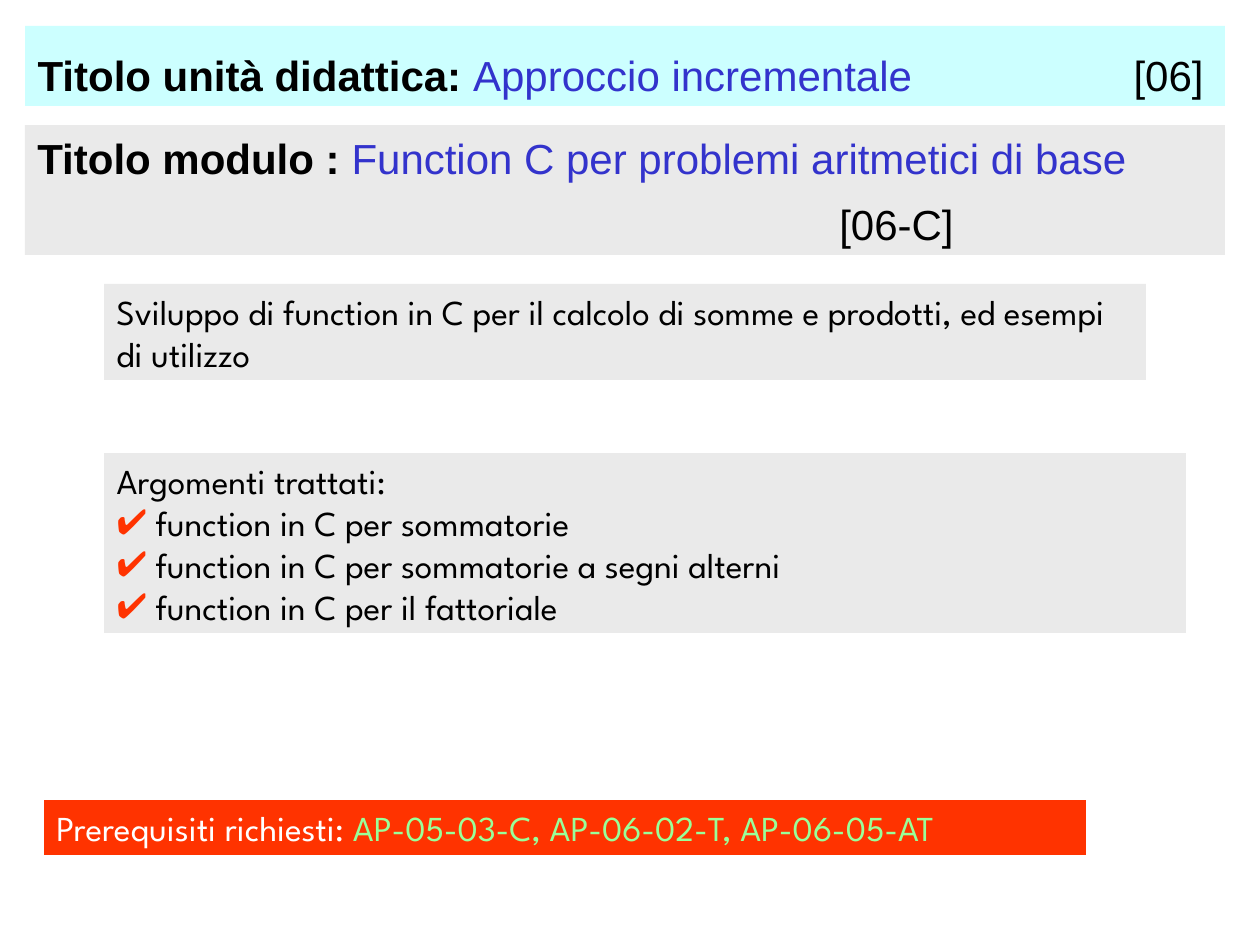
from lxml import etree
from pptx import Presentation
from pptx.dml.color import RGBColor
from pptx.enum.text import MSO_ANCHOR, MSO_AUTO_SIZE, PP_ALIGN
from pptx.oxml.ns import qn
from pptx.util import Pt

LEFT = PP_ALIGN.LEFT
TOP, BOTTOM = MSO_ANCHOR.TOP, MSO_ANCHOR.BOTTOM
NO_AUTOFIT = MSO_AUTO_SIZE.NONE
EMU_PER_PX = 914400 / 126
HEADING_FONT, BODY_FONT = "Arial", "League Spartan"
HEADING_SIZE, BODY_SIZE = 24, 20
COLORS = {
    "unit": "CCFFFF",
    "panel": "EAEAEA",
    "alert": "FF3300",
    "black": "000000",
    "white": "FFFFFF",
    "name": "3333CC",
    "code": "99FF99",
}


def px(length):
    """Turn pixels into EMU."""
    return round(length * EMU_PER_PX)


def rgb(name):
    """Look up a named colour."""
    return RGBColor.from_string(COLORS[name])


def format_panel(panel, box, fill, anchor=TOP):
    """Place and fill a panel and return its text frame."""
    panel.left, panel.top, panel.width, panel.height = map(px, box)
    panel.fill.solid()
    panel.fill.fore_color.rgb = rgb(fill)
    frame = panel.text_frame
    frame.word_wrap = True
    frame.auto_size = NO_AUTOFIT
    frame.vertical_anchor = anchor
    return frame


def add_panel(slide, box, fill, anchor=TOP):
    """Add a filled text box and return its text frame."""
    return format_panel(slide.shapes.add_textbox(*map(px, box)), box, fill, anchor)


def format_paragraph(paragraph, space_before=0):
    """Align a paragraph left with the given space above."""
    paragraph.alignment = LEFT
    paragraph.space_before = Pt(space_before)


def add_run(paragraph, text, color="black", font=BODY_FONT, size=BODY_SIZE, bold=False):
    """Add one formatted run."""
    run = paragraph.add_run()
    run.text = text
    run.font.name = font
    run.font.size = Pt(size)
    run.font.bold = bold
    run.font.color.rgb = rgb(color)


def add_heading_run(paragraph, text, color="black", bold=False):
    """Add one run in the heading style."""
    add_run(paragraph, text, color, HEADING_FONT, HEADING_SIZE, bold)


def add_tab_stop(paragraph, position):
    """Set a left tab stop."""
    tabs = etree.SubElement(paragraph._p.get_or_add_pPr(), qn("a:tabLst"))
    etree.SubElement(tabs, qn("a:tab"), pos=str(px(position)), algn="l")


def set_bullet(paragraph, mark=None, indent=0):
    """Give a paragraph a coloured bullet, or none."""
    properties = paragraph._p.get_or_add_pPr()
    properties.set("marL", str(px(indent)))
    properties.set("indent", str(-px(indent)))
    if mark is None:
        etree.SubElement(properties, qn("a:buNone"))
        return
    color = etree.SubElement(properties, qn("a:buClr"))
    etree.SubElement(color, qn("a:srgbClr"), val=COLORS["alert"])
    etree.SubElement(properties, qn("a:buChar"), char=mark)


def add_unit_title(slide):
    """Fill the title with the unit name and number."""
    frame = format_panel(slide.shapes.title, (25, 26, 1200, 80), "unit", BOTTOM)
    title = frame.paragraphs[0]
    format_paragraph(title)
    add_tab_stop(title, 1096)
    add_heading_run(title, "Titolo unità didattica: ", bold=True)
    add_heading_run(title, "Approccio incrementale", "name")
    add_heading_run(title, "\t[06]")


def add_module_title(slide):
    """Add the module name and its code below."""
    frame = add_panel(slide, (25, 125, 1200, 130), "panel", BOTTOM)
    module = frame.paragraphs[0]
    format_paragraph(module)
    add_heading_run(module, "Titolo modulo : ", bold=True)
    add_heading_run(module, "Function C per problemi aritmetici di base", "name")
    code = frame.add_paragraph()
    format_paragraph(code, space_before=9)
    add_tab_stop(code, 802)
    add_heading_run(code, "\t[06-C]")


def add_note(slide, box, fill, runs):
    """Add a one-paragraph panel from text and colour pairs."""
    note = add_panel(slide, box, fill).paragraphs[0]
    format_paragraph(note)
    for text, color in runs:
        add_run(note, text, color)


def add_topics(slide, heading, topics):
    """Fill the body with a heading and a ticked list."""
    frame = format_panel(slide.placeholders[1], (104, 453, 1082, 180), "panel")
    paragraph = frame.paragraphs[0]
    format_paragraph(paragraph)
    set_bullet(paragraph)
    add_run(paragraph, heading)
    for topic in topics:
        paragraph = frame.add_paragraph()
        format_paragraph(paragraph)
        set_bullet(paragraph, "✔", 39)
        add_run(paragraph, topic)


def main():
    """Build and save the slide."""
    deck = Presentation()
    deck.slide_width, deck.slide_height = px(1260), px(945)
    slide = deck.slides.add_slide(deck.slide_layouts[1])
    add_unit_title(slide)
    add_module_title(slide)
    add_note(slide, (104, 284, 1042, 96), "panel", [
        ("Sviluppo di function in C per il calcolo di somme e prodotti, "
         "ed esempi di utilizzo", "black"),
    ])
    add_topics(slide, "Argomenti trattati:", [
        "function in C per sommatorie",
        "function in C per sommatorie a segni alterni",
        "function in C per il fattoriale",
    ])
    add_note(slide, (44, 800, 1042, 55), "alert", [
        ("Prerequisiti richiesti: ", "white"),
        ("AP-05-03-C, AP-06-02-T, AP-06-05-AT", "code"),
    ])
    deck.save("out.pptx")


if __name__ == "__main__":
    main()
